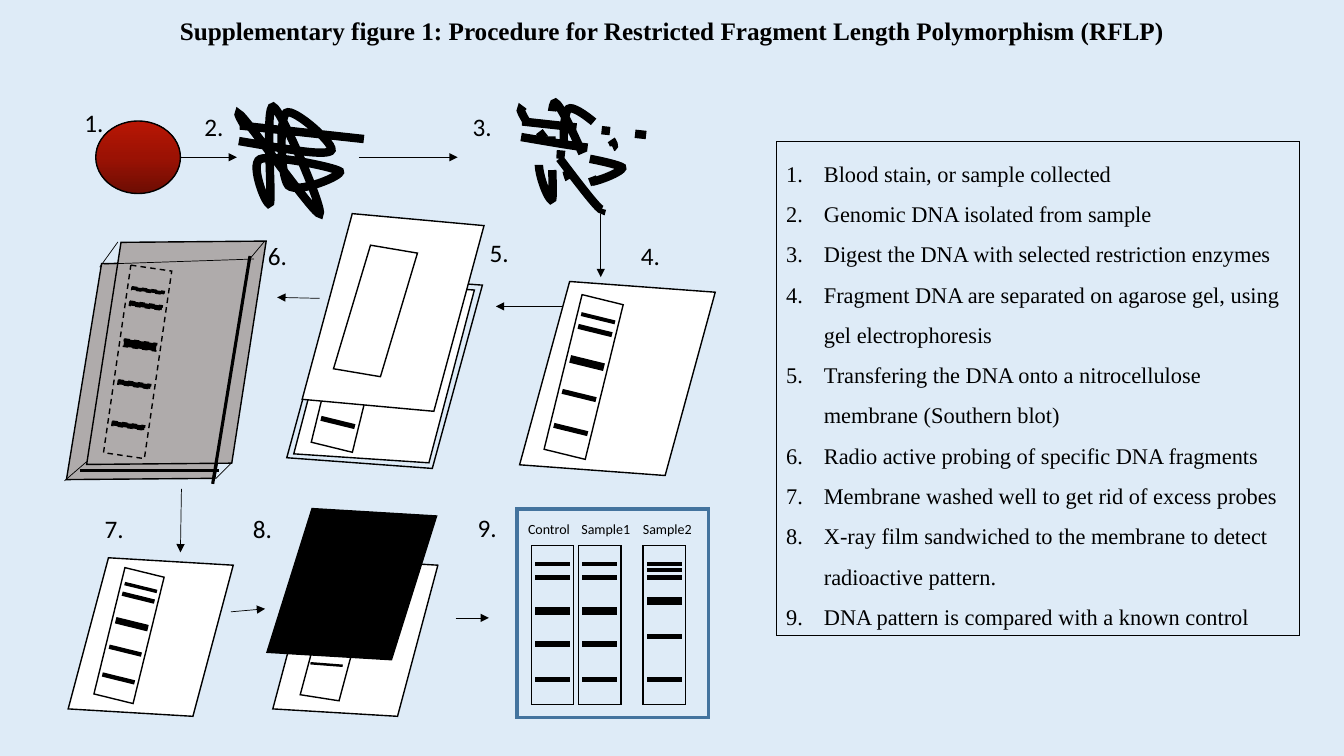
from copy import deepcopy
from dataclasses import dataclass
from math import cos, radians, sin
from typing import Any

from lxml import etree
from pptx import Presentation
from pptx.dml.color import RGBColor
from pptx.enum.dml import MSO_LINE
from pptx.enum.shapes import MSO_CONNECTOR, MSO_SHAPE
from pptx.enum.text import MSO_ANCHOR, MSO_AUTO_SIZE, PP_ALIGN
from pptx.oxml.ns import qn
from pptx.util import Inches, Pt

CIRCLE = MSO_SHAPE.FLOWCHART_CONNECTOR
SHEET = MSO_SHAPE.FLOWCHART_DATA
STRIP = MSO_SHAPE.FLOWCHART_PROCESS
SLANT = MSO_SHAPE.PARALLELOGRAM
STRAIGHT = MSO_CONNECTOR.STRAIGHT
DASH, DASH_DOT = MSO_LINE.DASH, MSO_LINE.LONG_DASH_DOT
TOP, NO_FIT, GROW = MSO_ANCHOR.TOP, MSO_AUTO_SIZE.NONE, MSO_AUTO_SIZE.SHAPE_TO_FIT_TEXT
LEFT, CENTER = PP_ALIGN.LEFT, PP_ALIGN.CENTER

CELL = Inches(0.1)
SLIDE_COLS, SLIDE_ROWS = 133.33, 75
BLACK, WHITE, GREY, STEEL, SKY = "000000", "FFFFFF", "AFABAB", "43739E", "DEEBF7"
BLOOD = ("6D0D03", "9B1204", "B81604")
SERIF, SANS = "Times New Roman", "Calibri"

BANDS = [(0.12, 0.016), (0.2, 0.023), (0.41, 0.04), (0.62, 0.023), (0.84, 0.023)]
SAMPLE2_BANDS = [(0.12, 0.016), (0.2, 0.023), (0.35, 0.04), (0.57, 0.023), (0.84, 0.023), (0.155, 0.016)]
STRAND_START = (0, 3.4)
STRAND_CURVES = [
    [(4.2, 4.1), (8.3, 4.9), (9.1, 4.4)], [(9.9, 4), (5.4, 0), (4.7, 0.6)],
    [(4, 1.1), (4.1, 6.8), (4.9, 7.8)], [(5.8, 8.7), (10.4, 6.8), (10, 6.4)],
    [(9.5, 6), (3.2, 4.7), (2.1, 5.2)], [(1, 5.7), (2.9, 10.4), (3.1, 9.5)],
    [(3.3, 8.6), (2.6, -0.2), (3.4, 0)], [(4.2, 0.2), (8.5, 10.4), (8, 10.6)],
    [(7.6, 10.8), (1.8, 2.7), (0.5, 1.2)], [(-0.7, -0.2), (0.5, 1.8), (0.5, 1.8)],
]
STRAND_END = [(0.5, 1.9), (12.4, 3.2)]
TITLE = "Supplementary figure 1: Procedure for Restricted Fragment Length Polymorphism (RFLP)"
STEPS = [
    "Blood stain, or sample collected",
    "Genomic DNA isolated from sample",
    "Digest the DNA with selected restriction enzymes",
    "Fragment DNA are separated on agarose gel, using gel electrophoresis",
    "Transfering the DNA onto a nitrocellulose membrane (Southern blot)",
    "Radio active probing of specific DNA fragments",
    "Membrane washed well to get rid of excess probes",
    "X-ray film sandwiched to the membrane to detect radioactive pattern.",
    "DNA pattern is compared with a known control",
]


def color(code):
    return RGBColor.from_string(code)


def cells(*counts):
    return [round(count * CELL) for count in counts]


def stroke(line, weight, code=BLACK, dash=None):
    line.color.rgb = color(code)
    line.width = Pt(weight)
    if dash:
        line.dash_style = dash
    etree.SubElement(line._get_or_add_ln(), qn("a:miter"), lim="800000")


def write(frame, lines, size=18, font=SANS, bold=False, align=LEFT, spacing=1.0, numbered=False, fit=GROW):
    frame.word_wrap, frame.vertical_anchor, frame.auto_size = True, TOP, fit
    for index, line in enumerate(lines):
        paragraph = frame.add_paragraph() if index else frame.paragraphs[0]
        paragraph.alignment, paragraph.line_spacing = align, spacing
        run = paragraph.add_run()
        run.text = line
        run.font.size, run.font.name, run.font.bold = Pt(size), font, bold
        run.font.color.rgb = color(BLACK)
        if numbered:
            properties = paragraph._p.get_or_add_pPr()
            properties.set("marL", str(Inches(0.375)))
            properties.set("indent", str(-Inches(0.375)))
            etree.SubElement(properties, qn("a:buFont"), typeface="+mj-lt")
            etree.SubElement(properties, qn("a:buAutoNum"), type="arabicPeriod")


@dataclass
class Region:
    shapes: Any
    left: float
    top: float

    def piece(self, kind, x, y, w, h, fill=None, turn=0, weight=1, edge=BLACK, dash=None):
        piece = self.shapes.add_shape(kind, *cells(self.left + x, self.top + y, w, h))
        piece.shadow.inherit = False
        piece.rotation = turn
        if fill:
            piece.fill.solid()
            piece.fill.fore_color.rgb = color(fill)
        else:
            piece.fill.background()
        stroke(piece.line, weight, edge, dash)
        return piece

    def line(self, x1, y1, x2, y2, weight=0.5, arrow=False):
        ends = cells(self.left + x1, self.top + y1, self.left + x2, self.top + y2)
        line = self.shapes.add_connector(STRAIGHT, *ends)
        stroke(line.line, weight)
        if arrow:
            etree.SubElement(line.line._get_or_add_ln(), qn("a:tailEnd"), type="triangle")
        etree.SubElement(line._element.spPr, qn("a:effectLst"))

    def label(self, text, x, y, w=7, h=3.8, **style):
        box = self.shapes.add_textbox(*cells(self.left + x, self.top + y, w, h))
        write(box.text_frame, [text], **style)

    def lane(self, x, y, w, h, turn=0, bands=BANDS, dash=None):
        self.piece(STRIP, x, y, w, h, turn=turn, dash=dash)
        angle = radians(turn)
        for share, thickness in bands:
            offset = (share - 0.5) * h
            center_x = x + w / 2 - offset * sin(angle)
            center_y = y + h / 2 + offset * cos(angle)
            band_w, band_h = 0.79 * w, thickness * h
            self.piece(STRIP, center_x - band_w / 2, center_y - band_h / 2, band_w, band_h, BLACK, turn, dash=dash)

    def strand(self, x, y, dash=None):
        anchors = [STRAND_START, *(curve[-1] for curve in STRAND_CURVES), *STRAND_END]
        start, *others = [cells(self.left + x + px, self.top + y + py) for px, py in anchors]
        builder = self.shapes.build_freeform(*start)
        builder.add_line_segments(others, close=False)
        strand = builder.convert_to_shape()
        segments = list(strand._element.iter(qn("a:lnTo")))
        for segment, curve in zip(segments, STRAND_CURVES):
            bend = etree.Element(qn("a:cubicBezTo"))
            for point in curve:
                px, py = cells(*point)
                etree.SubElement(bend, qn("a:pt"), x=str(px), y=str(py))
            segment.getparent().replace(segment, bend)
        strand.shadow.inherit = False
        strand.fill.background()
        stroke(strand.line, 6, dash=dash)


def draw_samples(region):
    blood = region.piece(CIRCLE, 2.1, 1.8, 8.4, 7.2, BLOOD[0])
    blood.fill.gradient()
    blood.fill.gradient_angle = 90
    stops = next(blood._element.iter(qn("a:gsLst")))
    middle = deepcopy(stops[0])
    middle.set("pos", "50000")
    stops.insert(1, middle)
    for stop, code in zip(blood.fill.gradient_stops, BLOOD):
        stop.color.rgb = color(code)
    region.line(10.5, 5.4, 16.1, 5.4, arrow=True)
    region.strand(16.3, 0.4)
    region.strand(44.3, 0, DASH_DOT)
    region.line(28.2, 5.4, 38, 5.4, arrow=True)
    region.line(52.2, 11, 52.2, 17.3, arrow=True)
    for text, x, y in (("1.", 0, 0), ("2.", 11.9, 0.3), ("3.", 38.5, 0.3)):
        region.label(text, x, y)


def draw_gel(region):
    region.line(6.6, 7.1, 0, 7.1, arrow=True)
    region.piece(SHEET, 3.6, 5.6, 16.8, 17.4, turn=3.8)
    region.piece(SHEET, 3, 5, 18.1, 18.5, WHITE, 4.2)
    region.lane(6.6, 6.2, 4.2, 15.8, 13.8)
    region.label("4.", 13.4, 0)


def draw_blot(region):
    region.line(4.2, 8, 0, 7.9, arrow=True)
    region.piece(SHEET, 2.2, 6.6, 16.8, 17.4, WHITE, 3.8)
    region.piece(SHEET, 1.6, 6, 18.1, 18.5, turn=4.2)
    region.lane(5.2, 7.2, 4.2, 15.8, 13.8)
    region.piece(SHEET, 3.3, 0, 16.4, 18.8, WHITE, 5.2)
    region.piece(SLANT, 6.6, 2.9, 6.3, 12.7, WHITE, 9.6)
    region.label("5.", 20.1, 1.5)


def draw_probing(region):
    region.piece(SHEET, 0.1, 2.8, 18.4, 21.4, GREY, -0.5)
    region.piece(SHEET, 2.1, 0.7, 18, 22, GREY, -0.5)
    for edge in ((3.5, 3.2, 5.3, 0.7), (18.2, 2.6, 19.8, 0.7), (15, 24.2, 16.6, 22.6),
                 (2.2, 22.5, 0, 24.4), (3.9, 2.9, 18.8, 2.4)):
        region.line(*edge)
    region.line(1.5, 23.4, 15.3, 23.4, 2.25)
    region.line(18.4, 2.1, 14.7, 24.7, 2.25)
    region.lane(5.2, 3.2, 4.1, 18.8, 8.3, dash=DASH)
    region.line(11.6, 25.2, 11.5, 31.5, arrow=True)
    region.label("6.", 19.2, 0, 9.6)


def draw_washed(region):
    region.piece(SHEET, 0, 5.2, 15.5, 15.2, WHITE, 3.4)
    region.lane(3.6, 6.2, 4, 12.9, 13.8)
    region.line(15.7, 10.3, 19.1, 10, arrow=True)
    region.label("7.", 2.2, 0)


def draw_film(region):
    region.piece(SHEET, 3.4, 5.2, 15.5, 15.2, WHITE, 3.4)
    region.piece(SLANT, 6.6, 6.8, 5.2, 12.2, turn=8.9)
    for x, y, weight in ((8.7, 8.4, 1.75), (8.3, 9.8, 3), (7.9, 11.9, 4.5), (7, 13.7, 3.5), (6.7, 15.4, 1.75)):
        region.line(x, y, x + 3.2, y + 0.25, weight)
    region.piece(SLANT, 2.8, 0.3, 16, 14.5, BLACK, 3.4)
    region.line(21.1, 10.9, 24.4, 10.9, arrow=True)
    region.label("8.", 0, 0, 8.7)


def draw_comparison(region):
    region.piece(STRIP, 4.9, 0.2, 19, 20.7, weight=2.25, edge=STEEL)
    for name, name_x, lane_x, bands in (("Control", 5, 6.3, BANDS), ("Sample1", 10.3, 11, BANDS),
                                        ("Sample2", 16.4, 17.4, SAMPLE2_BANDS)):
        region.lane(lane_x, 3.8, 4.2, 15.8, bands=bands)
        region.label(name, name_x, 0.8, 7.7, 2.6, size=10)
    region.label("9.", 0, 0, 8.3)


def draw_steps(shapes, left, top, width, height):
    steps = shapes.add_textbox(*cells(left, top, width, height))
    stroke(steps.line, 0.75)
    write(steps.text_frame, STEPS, size=16, font=SERIF, spacing=1.5, numbered=True)


def draw_title(title, left, top, width, height):
    title.left, title.top, title.width, title.height = cells(left, top, width, height)
    write(title.text_frame, [TITLE], font=SERIF, bold=True, align=CENTER, fit=NO_FIT)


def main():
    deck = Presentation()
    deck.slide_width, deck.slide_height = cells(SLIDE_COLS, SLIDE_ROWS)
    slide = deck.slides.add_slide(deck.slide_layouts[5])
    slide.background.fill.solid()
    slide.background.fill.fore_color.rgb = color(SKY)
    for draw, left, top in ((draw_samples, 7.4, 10.2), (draw_probing, 6.4, 23.3), (draw_washed, 7.2, 50.4),
                            (draw_film, 24.1, 50.4), (draw_gel, 49.2, 23.3), (draw_comparison, 46.4, 50.3),
                            (draw_blot, 27.5, 21.6)):
        draw(Region(slide.shapes, left, top))
    draw_steps(slide.shapes, 77, 14.04, 51.9, 49)
    draw_title(slide.shapes.title, 0, 1, SLIDE_COLS, 4)
    deck.save("out.pptx")


if __name__ == "__main__":
    main()
